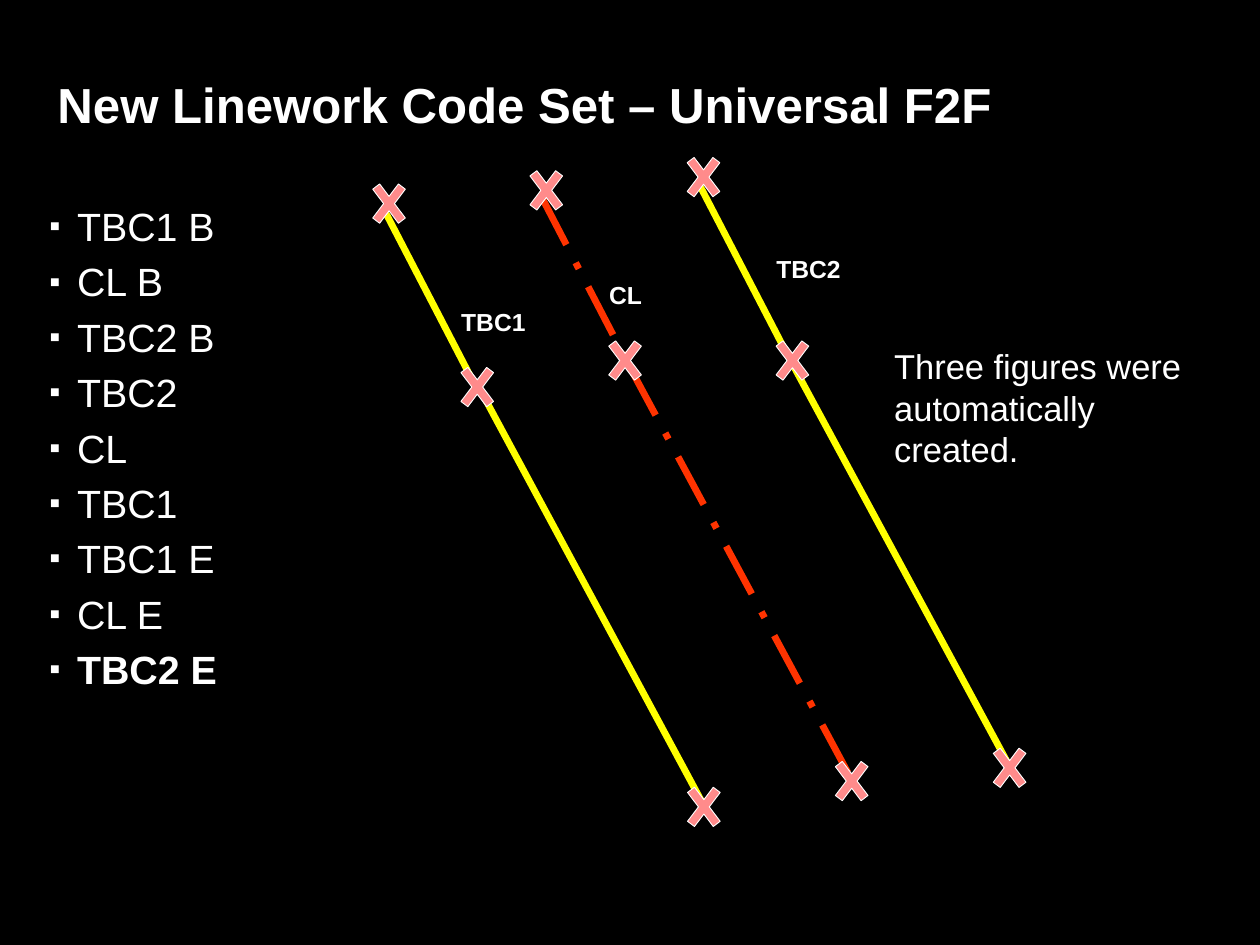
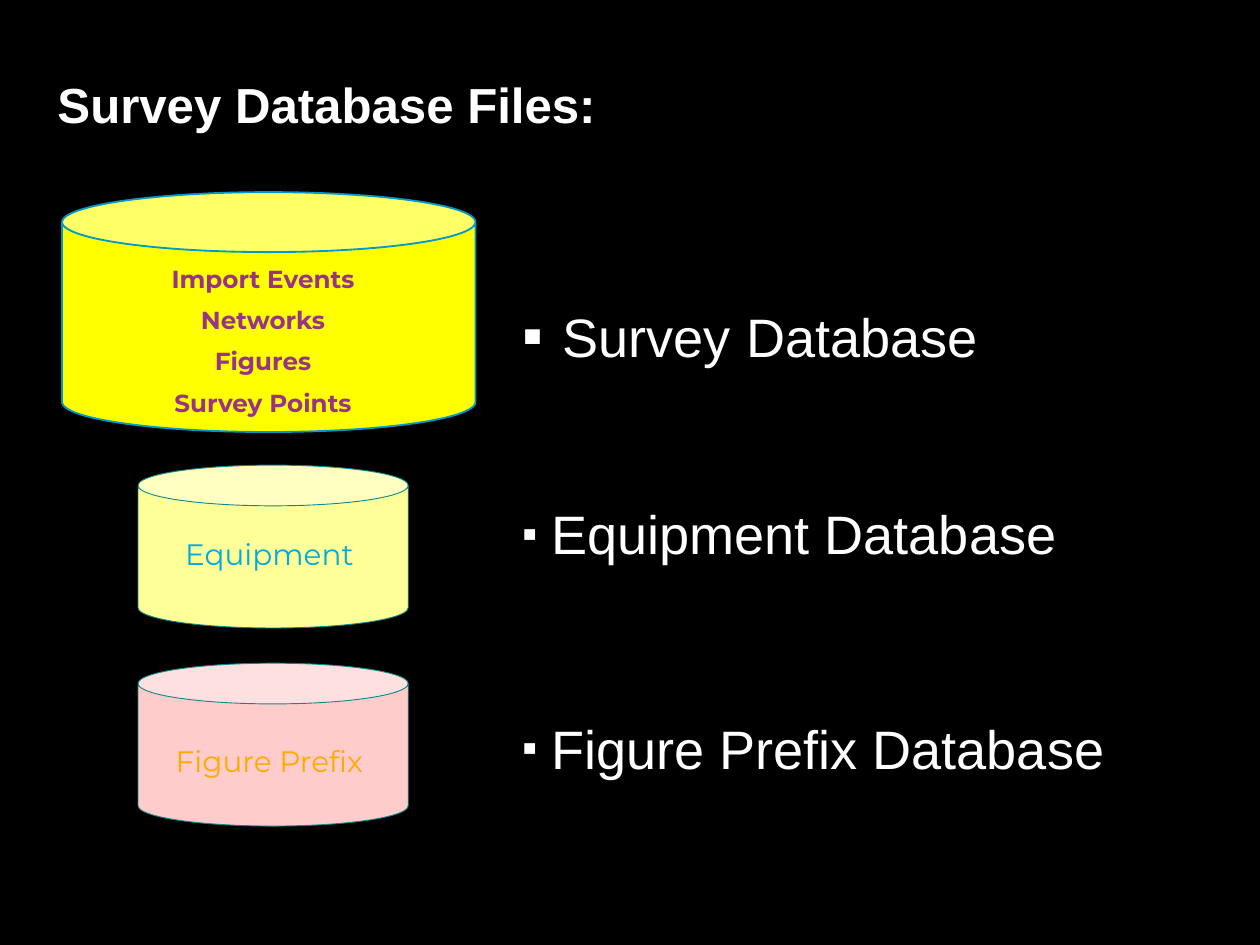
from pptx import Presentation
from pptx.dml.color import RGBColor
from pptx.enum.dml import MSO_LINE
from pptx.enum.shapes import MSO_CONNECTOR, MSO_SHAPE
from pptx.enum.text import MSO_ANCHOR, PP_ALIGN
from pptx.oxml.ns import qn
from pptx.util import Cm, Pt
from lxml import etree

DASH = MSO_LINE.LONG_DASH_DOT
STRAIGHT = MSO_CONNECTOR.STRAIGHT
CROSS, CAN = MSO_SHAPE.MATH_MULTIPLY, MSO_SHAPE.CAN
TOP, MIDDLE = MSO_ANCHOR.TOP, MSO_ANCHOR.MIDDLE
LEFT, CENTER = PP_ALIGN.LEFT, PP_ALIGN.CENTER

BLACK, WHITE = "000000", "FFFFFF"
YELLOW, RED, PINK = "FFFF00", "FF3300", "FF8B8B"

CODES = ["TBC1 B", "CL B", "TBC2 B", "TBC2", "CL", "TBC1", "TBC1 E", "CL E",
         ("TBC2 E", {"bold": True})]
NOTE = "Three figures were automatically created."

FIGURES = [
    {"name": "TBC1", "color": YELLOW, "dash": None, "gap": (0.28, 0.38),
     "mid": (13.69, 11.1), "end": (20.19, 23.14), "rise": 2.44},
    {"name": "CL", "color": RED, "dash": DASH, "gap": (0, 0),
     "mid": (17.93, 10.34), "end": (24.43, 22.4), "rise": 2.44},
    {"name": "TBC2", "color": YELLOW, "dash": None, "gap": (0, 0),
     "mid": (22.73, 10.34), "end": (28.96, 22.02), "rise": 3.18},
]
START, STEP, LEG = (11.02, 6.02), (4.51, -0.38), (2.54, 4.9)
MARK = (1.42, 1.88)

CANS = [
    {"box": (1.78, 5.51, 11.86, 6.88), "fill": YELLOW, "line": "0099CC",
     "width": 1.5, "label": (3.05, 7.44, 8.99, 4.95),
     "text": ["Import Events", "Networks", "Figures", "Survey Points"],
     "format": {"size": 20, "color": "993388", "bold": True, "before": 9.5}},
    {"box": (3.96, 13.34, 7.75, 4.67), "fill": "FFFF99", "line": "118888",
     "width": 0.75, "label": (3.85, 15.24, 7.75, 1.37),
     "text": ["Equipment"], "format": {"size": 24, "color": "00AADD"}},
    {"box": (3.96, 19.02, 7.75, 4.67), "fill": "FFCCCC", "line": "118888",
     "width": 0.75, "label": (3.85, 21.18, 7.75, 1.27),
     "text": ["Figure Prefix"], "format": {"size": 24, "color": "FFAA00"}},
]
BASES = [
    ("Survey Database", {"hang": (1.46, 1.16), "scale": 109}),
    ("Equipment Database", {"before": 108}),
    ("Figure Prefix Database", {"before": 121.7}),
]


def rgb(color):
    return RGBColor.from_string(color)


def shift(point, delta, times=1):
    return tuple(p + d * times for p, d in zip(point, delta))


def bullet(para, hang, scale):
    props = para._p.get_or_add_pPr()
    props.set("marL", str(Cm(hang[0])))
    props.set("indent", str(-Cm(hang[1])))
    tint = etree.SubElement(props, qn("a:buClr"))
    etree.SubElement(tint, qn("a:srgbClr"), val=WHITE)
    etree.SubElement(props, qn("a:buSzPct"), val=str(scale * 1000))
    etree.SubElement(props, qn("a:buFont"), typeface="Arial")
    etree.SubElement(props, qn("a:buChar"), char="▪")


def write(slide, box, lines, **format):
    base = {"size": 20, "font": "Arial", "color": WHITE, "bold": False,
            "align": LEFT, "anchor": TOP, "pad": (0.25, 0.13),
            "before": 0, "hang": None, "scale": 80} | format
    frame = slide.shapes.add_textbox(*map(Cm, box)).text_frame
    frame.word_wrap = True
    frame.vertical_anchor = base["anchor"]
    frame.margin_left = frame.margin_right = Cm(base["pad"][0])
    frame.margin_top = frame.margin_bottom = Cm(base["pad"][1])
    for i, line in enumerate(lines):
        text, extra = (line, {}) if isinstance(line, str) else line
        look = base | extra
        para = frame.add_paragraph() if i else frame.paragraphs[0]
        para.alignment = look["align"]
        if look["hang"]:
            bullet(para, look["hang"], look["scale"])
        if i:
            para.space_before = Pt(look["before"])
        run = para.add_run()
        run.text = text
        run.font.size = Pt(look["size"])
        run.font.name = look["font"]
        run.font.bold = look["bold"]
        run.font.color.rgb = rgb(look["color"])


def draw(slide, kind, box, fill, line, width, adjust):
    shape = slide.shapes.add_shape(kind, *map(Cm, box))
    shape.shadow.inherit = False
    shape.adjustments[0] = adjust
    shape.fill.solid()
    shape.fill.fore_color.rgb = rgb(fill)
    shape.line.color.rgb = rgb(line)
    shape.line.width = Pt(width)


def link(slide, start, end, color, dash):
    line = slide.shapes.add_connector(STRAIGHT, *map(Cm, start + end))
    line.line.color.rgb = rgb(color)
    line.line.width = Pt(5.5)
    if dash:
        line.line.dash_style = dash
    etree.SubElement(line._element.spPr, qn("a:effectLst"))


def page(deck, title):
    slide = deck.slides.add_slide(deck.slide_layouts[6])
    slide.background.fill.solid()
    slide.background.fill.fore_color.rgb = rgb(BLACK)
    write(slide, (1.65, 1.02, 32.66, 3.94), [title], size=40, bold=True,
          anchor=MIDDLE, pad=(0, 0))
    return slide


def linework(deck):
    slide = page(deck, "New Linework Code Set – Universal F2F")
    write(slide, (1.42, 5.8, 8, 18), CODES, size=32, pad=(0, 0),
          before=6.6, hang=(0.79, 0.79))
    for i, fig in enumerate(FIGURES):
        start = shift(START, STEP, i)
        knee = shift(start, LEG)
        ink = fig["color"], fig["dash"]
        link(slide, start, knee, *ink)
        link(slide, shift(knee, fig["gap"]), shift(fig["end"], (0.08, 0.11)),
             *ink)
        for spot in (shift(start, (0.14, -0.18)), fig["mid"], fig["end"]):
            draw(slide, CROSS, shift(spot, MARK, -0.5) + MARK, PINK, WHITE,
                 0.75, 0.175)
        write(slide, shift(fig["mid"], (-0.71, -fig["rise"])) + (3.68, 1.12),
              [fig["name"]], bold=True)
    write(slide, (25.4, 9.78, 9.32, 3.84), [NOTE], size=28)


def files(deck):
    slide = page(deck, "Survey Database Files:")
    for can in CANS:
        draw(slide, CAN, can["box"], can["fill"], can["line"], can["width"],
             0.25)
        write(slide, can["label"], can["text"], font="Montserrat",
              align=CENTER, **can["format"])
    write(slide, (14.68, 8.69, 20.32, 14), BASES, size=44, pad=(0, 0),
          hang=(1.13, 0.83))


def main():
    deck = Presentation()
    deck.slide_width, deck.slide_height = Cm(36.14), Cm(27.1)
    linework(deck)
    files(deck)
    deck.save("out.pptx")


if __name__ == "__main__":
    main()
